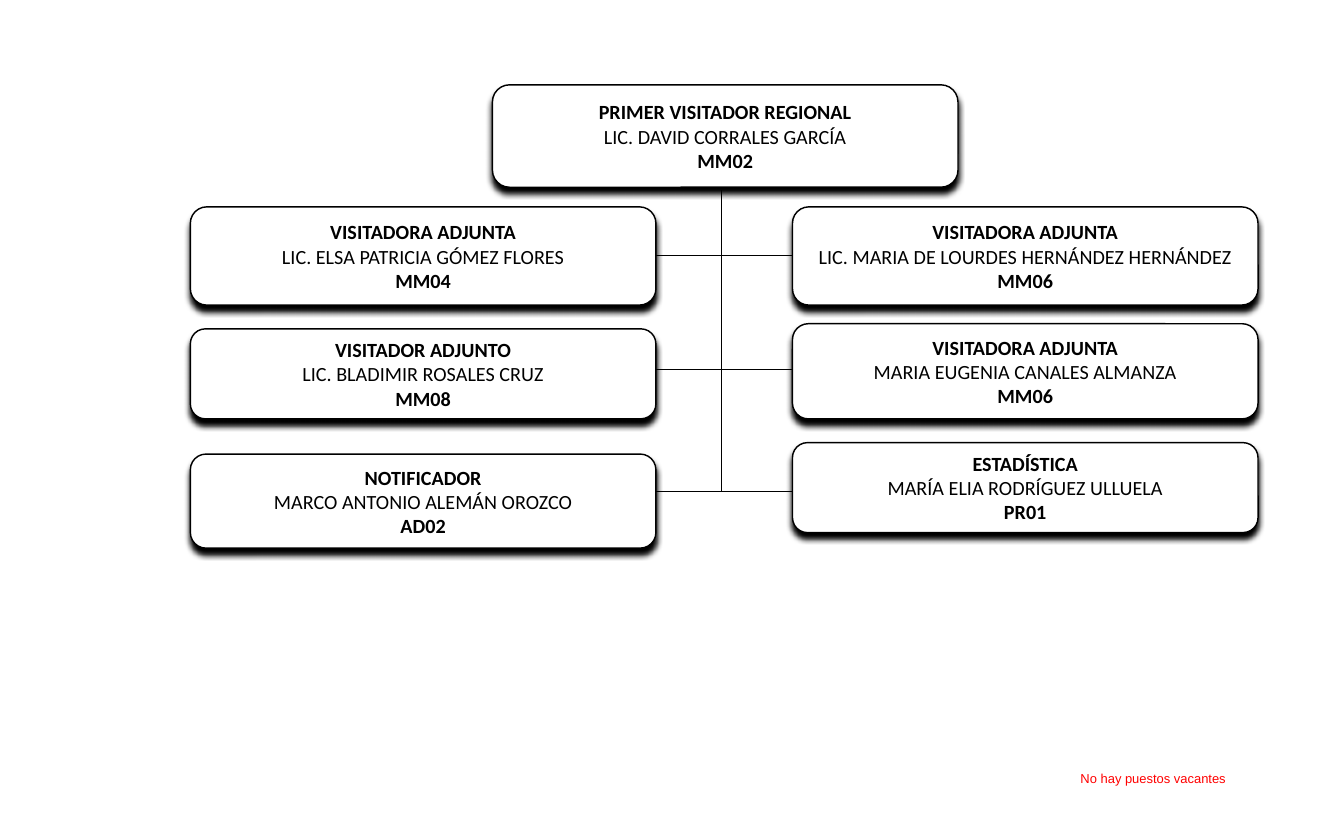
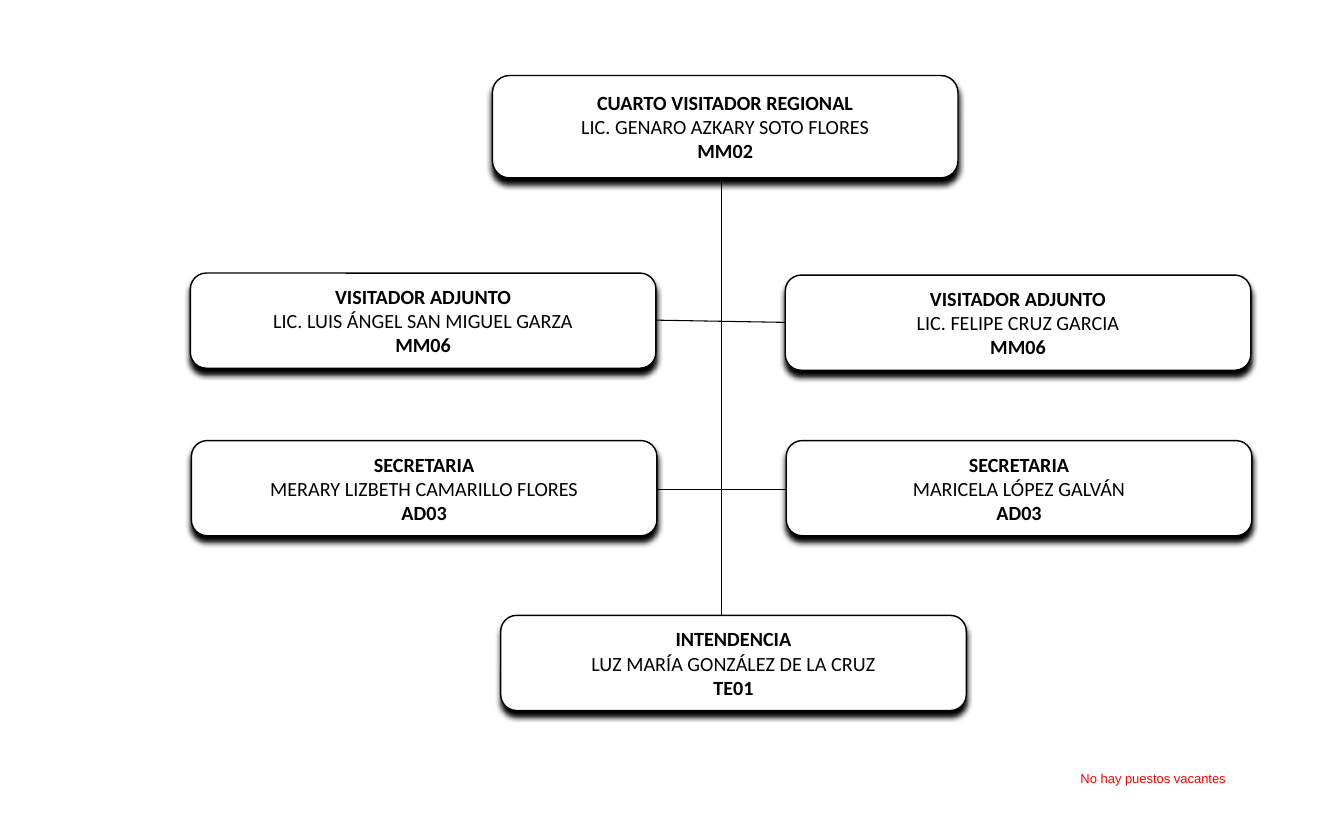
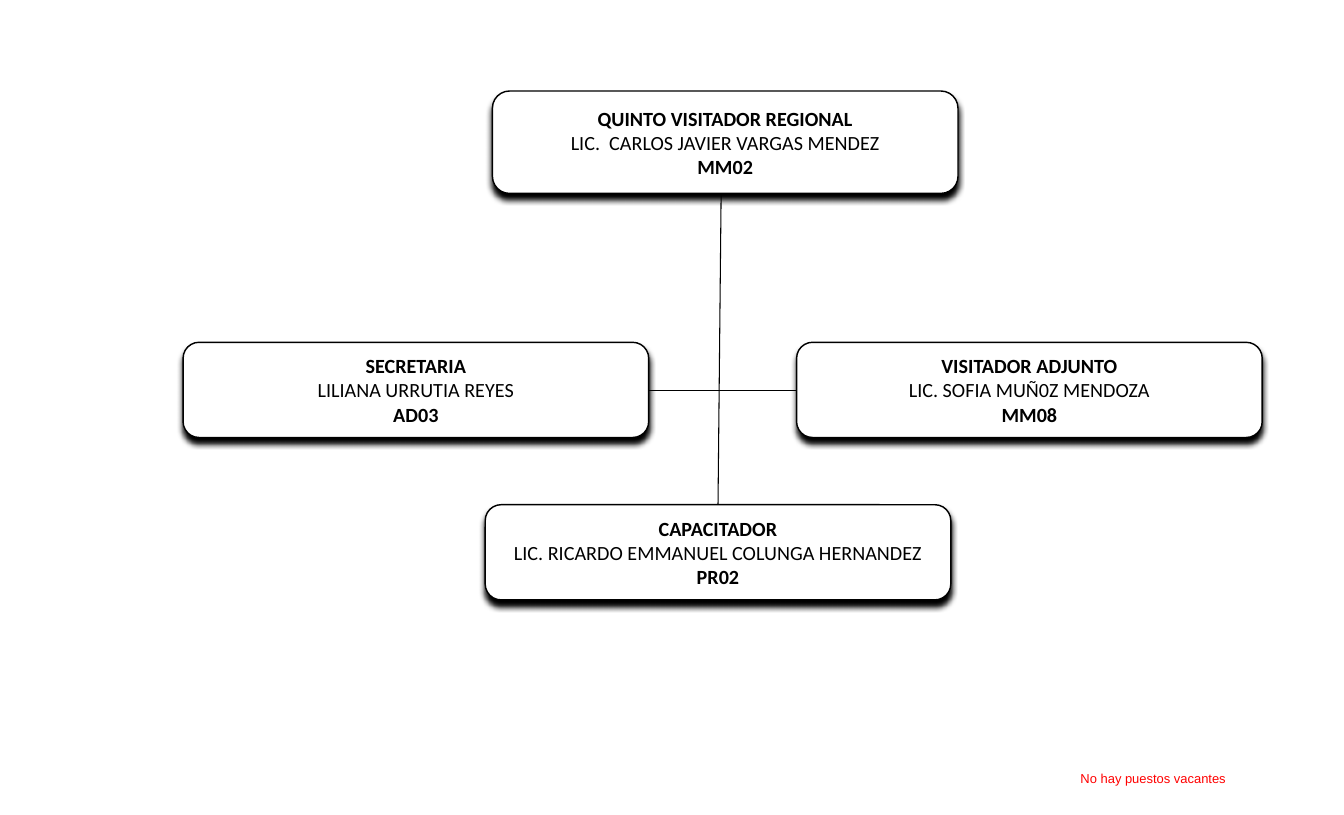
from lxml import etree
from pptx import Presentation
from pptx.dml.color import RGBColor
from pptx.enum import shapes, text
from pptx.oxml import ns
from pptx.util import Inches, Pt

# Shared style
BLACK, WHITE, RED = "000000", "FFFFFF", "FF0000"
BOX_WIDTH = 4.5
LEAD_HEIGHT = 0.99
STAFF_HEIGHT = 0.92
LEFT, CENTRE, RIGHT = 1.84, 4.76, 7.66
TRUNK = 6.97
VACANCIES = "No hay puestos vacantes"

# Each chart: lines (x1, y1, x2, y2) and
# boxes (left, top, height, post, person, grade)
CHARTS = [
    {
        "lines": [
            (TRUNK, 1.84, TRUNK, 4.75),
            (5.79, 2.47, 8.09, 2.47),
            (5.87, 3.57, 8.16, 3.57),
            (5.85, 4.75, 8.15, 4.75),
        ],
        "boxes": [
            (CENTRE, 0.82, LEAD_HEIGHT, "PRIMER VISITADOR REGIONAL", "LIC. DAVID CORRALES GARCÍA", "MM02"),
            (LEFT, 2, 0.95, "VISITADORA ADJUNTA", "LIC. ELSA PATRICIA GÓMEZ FLORES", "MM04"),
            (RIGHT, 2, 0.95, "VISITADORA ADJUNTA", "LIC. MARIA DE LOURDES HERNÁNDEZ HERNÁNDEZ", "MM06"),
            (LEFT, 3.18, 0.87, "VISITADOR ADJUNTO", "LIC. BLADIMIR ROSALES CRUZ", "MM08"),
            (RIGHT, 3.13, STAFF_HEIGHT, "VISITADORA ADJUNTA", "MARIA EUGENIA CANALES ALMANZA", "MM06"),
            (LEFT, 4.39, 0.91, "NOTIFICADOR", "MARCO ANTONIO ALEMÁN OROZCO", "AD02"),
            (RIGHT, 4.28, 0.87, "ESTADÍSTICA", "MARÍA ELIA RODRÍGUEZ ULLUELA", "PR01"),
        ],
    },
    {
        "lines": [
            (TRUNK, 1.75, TRUNK, 6.23),
            (6.02, 3.09, 7.75, 3.12),
            (5.79, 4.73, 8.09, 4.73),
        ],
        "boxes": [
            (CENTRE, 0.73, LEAD_HEIGHT, "CUARTO VISITADOR REGIONAL", "LIC. GENARO AZKARY SOTO FLORES", "MM02"),
            (LEFT, 2.64, STAFF_HEIGHT, "VISITADOR ADJUNTO", "LIC. LUIS ÁNGEL SAN MIGUEL GARZA", "MM06"),
            (7.59, 2.66, STAFF_HEIGHT, "VISITADOR ADJUNTO", "LIC. FELIPE CRUZ GARCIA", "MM06"),
            (1.85, 4.26, STAFF_HEIGHT, "SECRETARIA", "MERARY LIZBETH CAMARILLO FLORES", "AD03"),
            (7.6, 4.26, STAFF_HEIGHT, "SECRETARIA", "MARICELA LÓPEZ GALVÁN", "AD03"),
            (4.84, 5.95, STAFF_HEIGHT, "INTENDENCIA", "LUZ MARÍA GONZÁLEZ DE LA CRUZ", "TE01"),
        ],
    },
    {
        "lines": [
            (TRUNK, 1.89, 6.94, 4.88),
            (6.11, 3.78, 7.9, 3.78),
        ],
        "boxes": [
            (CENTRE, 0.88, LEAD_HEIGHT, "QUINTO VISITADOR REGIONAL", "LIC.  CARLOS JAVIER VARGAS MENDEZ", "MM02"),
            (1.77, 3.31, STAFF_HEIGHT, "SECRETARIA", "LILIANA URRUTIA REYES", "AD03"),
            (7.7, 3.31, STAFF_HEIGHT, "VISITADOR ADJUNTO", "LIC. SOFIA MUÑ0Z MENDOZA", "MM08"),
            (4.69, 4.88, STAFF_HEIGHT, "CAPACITADOR", "LIC. RICARDO EMMANUEL COLUNGA HERNANDEZ", "PR02"),
        ],
    },
]


def rgb(value):
    return RGBColor.from_string(value)


def add_run(p, words, font, size, color, bold=False):
    p.alignment = text.PP_ALIGN.CENTER
    r = p.add_run()
    r.text = words
    r.font.name = font
    r.font.size = Pt(size)
    r.font.bold = bold
    r.font.color.rgb = rgb(color)


def add_shadow(sp):
    """Solid black shadow straight below the shape."""
    sp.shadow.inherit = False
    effects = sp._element.spPr.find(ns.qn("a:effectLst"))
    shadow = etree.SubElement(effects, ns.qn("a:outerShdw"), blurRad=str(Pt(4)),
                              dist=str(Pt(4)), dir="5400000", rotWithShape="0")
    etree.SubElement(shadow, ns.qn("a:srgbClr"), val=BLACK)


def add_line(s, x1, y1, x2, y2):
    line = s.shapes.add_connector(shapes.MSO_CONNECTOR.STRAIGHT,
                                  Inches(x1), Inches(y1), Inches(x2), Inches(y2))
    line.line.color.rgb = rgb(BLACK)
    line.line.width = Pt(0.75)
    etree.SubElement(line._element.spPr, ns.qn("a:effectLst"))


def add_post(s, left, top, height, post, person, grade):
    sp = s.shapes.add_shape(shapes.MSO_SHAPE.ROUNDED_RECTANGLE, Inches(left), Inches(top),
                            Inches(BOX_WIDTH), Inches(height))
    sp.fill.solid()
    sp.fill.fore_color.rgb = rgb(WHITE)
    sp.line.color.rgb = rgb(BLACK)
    sp.line.width = Pt(1)
    add_shadow(sp)

    tf = sp.text_frame
    tf.word_wrap = False
    tf.vertical_anchor = text.MSO_ANCHOR.MIDDLE
    tf.margin_left = tf.margin_right = Inches(0.17)
    tf.margin_top = tf.margin_bottom = Inches(0.09)
    for i, words in enumerate((post, person, grade)):
        p = tf.add_paragraph() if i else tf.paragraphs[0]
        add_run(p, words, "Calibri", 14, BLACK, bold=words != person)


def add_vacancies(s):
    sp = s.shapes.add_textbox(Inches(9.49), Inches(7.4), Inches(3.31), Inches(0.25))
    tf = sp.text_frame
    tf.word_wrap = True
    tf.auto_size = text.MSO_AUTO_SIZE.SHAPE_TO_FIT_TEXT
    add_run(tf.paragraphs[0], VACANCIES, "Arial", 9, RED)


def main():
    prs = Presentation()
    prs.slide_width, prs.slide_height = Inches(12.99), Inches(7.88)
    blank = prs.slide_layouts[6]
    for chart in CHARTS:
        s = prs.slides.add_slide(blank)
        # Lines lie behind the boxes
        for line in chart["lines"]:
            add_line(s, *line)
        for box in chart["boxes"]:
            add_post(s, *box)
        add_vacancies(s)
    prs.save("out.pptx")


if __name__ == "__main__":
    main()
